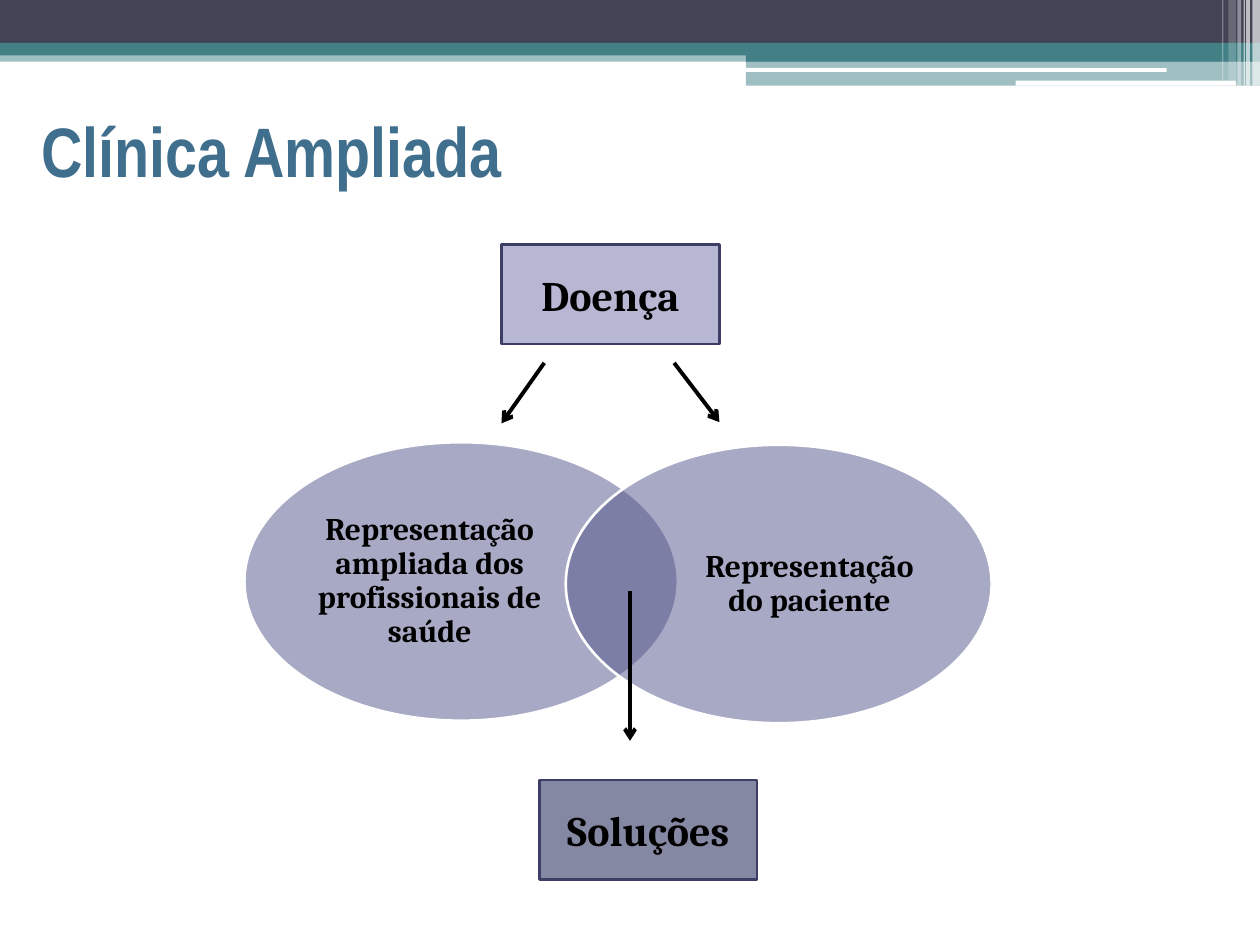
from dataclasses import dataclass
from lxml.etree import SubElement
from pptx import Presentation
from pptx.dml.color import RGBColor as RGB
from pptx.enum.shapes import MSO_CONNECTOR as LINE, MSO_SHAPE as SHAPE
from pptx.enum.text import MSO_ANCHOR as ANCHOR, PP_ALIGN as ALIGN
from pptx.oxml.ns import qn
from pptx.util import Inches, Pt


@dataclass(frozen=True)
class Theme:
    white: str = "FFFFFF"
    black: str = "000000"
    slate: str = "424456"
    teal: str = "438086"
    heading: str = "406F8D"
    lilac: str = "B7B7D4"
    gray: str = "8588A2"
    violet: str = "53548A"
    border: str = "3D3E66"
    title_font: str = "Arial Narrow"
    body_font: str = "Cambria"
    title_size: int = 40
    box_size: int = 24
    venn_size: int = 18
    outline: float = 1.5
    arrow: float = 2.25


T = Theme()
prs = Presentation()
prs.slide_width, prs.slide_height = Inches(10), Inches(7.5)
s = prs.slides.add_slide(prs.slide_layouts[6])

# Grid of 100 columns by 75 rows
COL, ROW = prs.slide_width / 100, prs.slide_height / 75


def add_area(kind, box, fill=None, alpha=100, line=None):
    """Add a shape, or a text box when kind is None; box is in columns and rows."""
    x, y, w, h = (round(v * u) for v, u in zip(box, (COL, ROW, COL, ROW)))
    if kind is None:
        return s.shapes.add_textbox(x, y, w, h)
    sp = s.shapes.add_shape(kind, x, y, w, h)
    sp.shadow.inherit = False
    sp.fill.solid()
    sp.fill.fore_color.rgb = RGB.from_string(fill)
    if alpha < 100:
        color = sp.fill._xPr.find(qn("a:solidFill"))[0]
        SubElement(color, qn("a:alpha"), val=str(alpha * 1000))
    if line:
        sp.line.color.rgb = RGB.from_string(line)
        sp.line.width = Pt(T.outline)
    else:
        sp.line.fill.background()
    return sp


def write(sp, text, size, font=T.body_font, color=T.black, align=ALIGN.CENTER):
    """Write one bold run, centred vertically in the shape."""
    tf = sp.text_frame
    tf.word_wrap = True
    tf.vertical_anchor = ANCHOR.MIDDLE
    p = tf.paragraphs[0]
    p.alignment = align
    r = p.add_run()
    r.text = text
    r.font.name, r.font.size, r.font.bold = font, Pt(size), True
    r.font.color.rgb = RGB.from_string(color)
    return tf


# Header bands
for box, color, alpha in [
    ((0, 4, 100, 0.9), T.teal, 50),
    ((0, 0, 100, 3.4), T.slate, 100),
    ((0, 3.4, 100, 1), T.teal, 100),
    ((59.2, 3.9, 40.8, 1), T.teal, 100),
    ((59.2, 4.8, 40.8, 2), T.teal, 50),
]:
    add_area(SHAPE.RECTANGLE, box, color, alpha)

# White rules under the header
for box in [(59.1, 5.4, 33.5, 0.3), (80.6, 6.4, 17.5, 0.4)]:
    add_area(SHAPE.ROUNDED_RECTANGLE, box, T.white)

# Translucent stripes in the corner: left, width, height, opacity
for x, w, h, alpha in [
    (99.4, 0.6, 6.8, 65),
    (98.9, 0.3, 6.8, 65),
    (98.7, 0.1, 6.8, 60),
    (98.2, 0.3, 6.8, 40),
    (97.5, 0.6, 6.4, 20),
    (97, 0.1, 6.4, 30),
]:
    add_area(SHAPE.RECTANGLE, (x, 0, w, h), T.white, alpha)

# Title
write(add_area(None, (2.3, 6, 90, 11.7)), "Clínica Ampliada",
      T.title_size, T.title_font, T.heading, ALIGN.LEFT)

# Start and end boxes
for text, x, y, fill in [
    ("Doença", 39.8, 19.4, T.lilac),
    ("Soluções", 42.8, 61.9, T.gray),
]:
    sp = add_area(SHAPE.RECTANGLE, (x, y, 17.3, 7.9), fill, line=T.border)
    write(sp, text, T.box_size)

# Overlapping ellipses with their labels
for text, oval, label in [
    ("Representação ampliada dos profissionais de saúde",
     (19.4, 35.1, 34.4, 22.1), (24.2, 37.7, 19.8, 16.9)),
    ("Representação do paciente",
     (44.9, 35.3, 33.8, 22.1), (54.5, 37.9, 19.5, 16.9)),
]:
    add_area(SHAPE.OVAL, oval, T.violet, 50, T.white)
    tf = write(add_area(None, label), text, T.venn_size)
    tf.margin_left = tf.margin_right = tf.margin_top = tf.margin_bottom = 0
    tf.paragraphs[0].line_spacing = 0.9

# Arrows
for x1, y1, x2, y2 in [
    (43.2, 28.8, 39.8, 33.6),
    (53.5, 28.8, 57.1, 33.5),
    (50, 46.9, 50, 58.8),
]:
    ends = [round(v * u) for v, u in zip((x1, y1, x2, y2), (COL, ROW, COL, ROW))]
    cxn = s.shapes.add_connector(LINE.STRAIGHT, *ends)
    cxn.line.color.rgb = RGB.from_string(T.black)
    cxn.line.width = Pt(T.arrow)
    SubElement(cxn.line._get_or_add_ln(), qn("a:tailEnd"), type="arrow")
    SubElement(cxn._element.spPr, qn("a:effectLst"))

prs.save("out.pptx")
